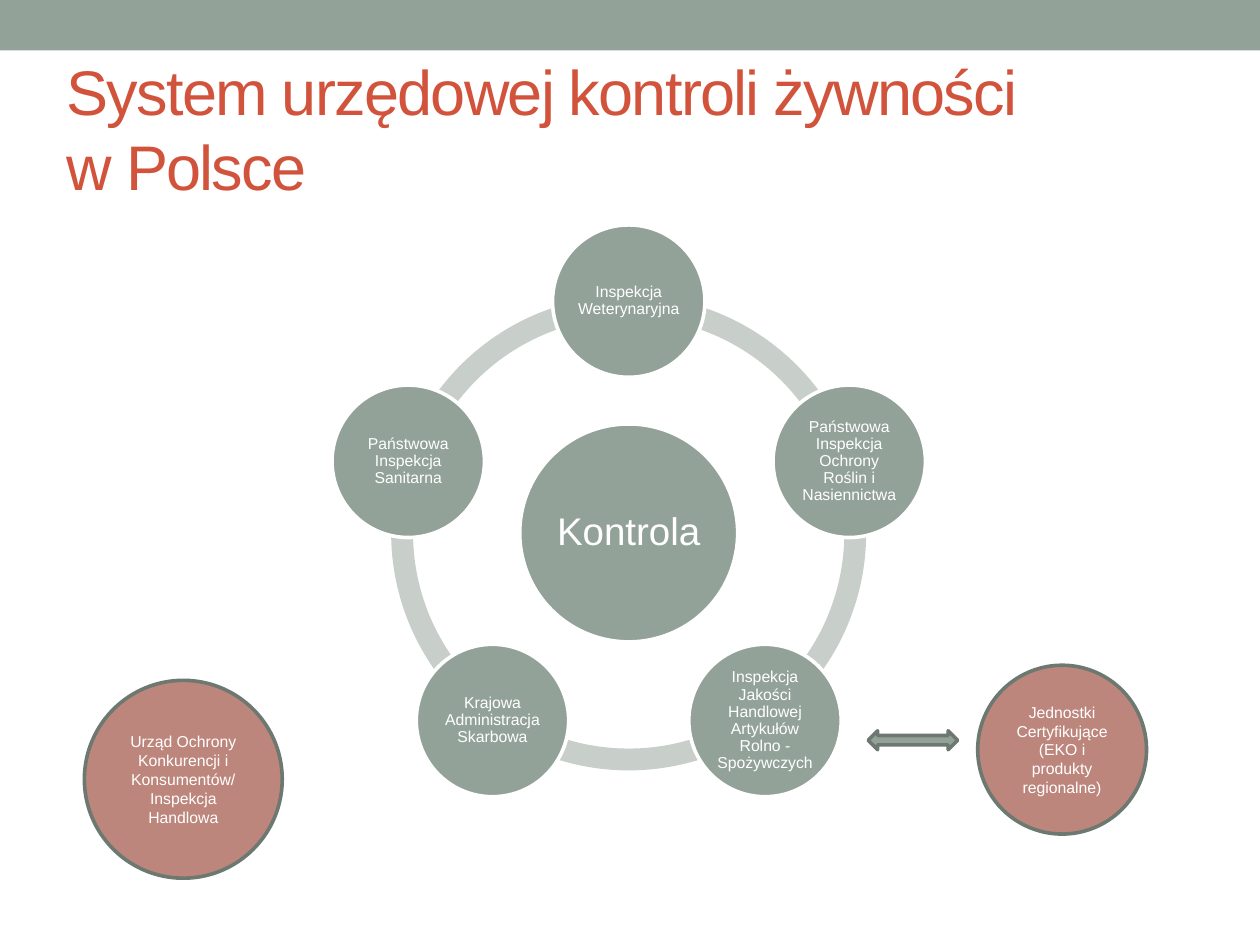
import math

from pptx import Presentation
from pptx.dml.color import RGBColor
from pptx.enum.shapes import MSO_SHAPE
from pptx.enum.text import MSO_ANCHOR, PP_ALIGN
from pptx.util import Inches, Pt

SAGE = RGBColor(0x93, 0xA2, 0x99)
PALE_SAGE = RGBColor(0xC8, 0xCE, 0xCA)
DARK_SAGE = RGBColor(0x6D, 0x78, 0x71)
ROSE = RGBColor(0xBD, 0x86, 0x7C)
RED = RGBColor(0xD2, 0x53, 0x3C)
WHITE = RGBColor(0xFF, 0xFF, 0xFF)
RECTANGLE, ELLIPSE = MSO_SHAPE.RECTANGLE, MSO_SHAPE.OVAL
BLOCK_ARC, CONNECTOR = MSO_SHAPE.BLOCK_ARC, MSO_SHAPE.FLOWCHART_CONNECTOR
DOUBLE_ARROW = MSO_SHAPE.LEFT_RIGHT_ARROW
LEFT, CENTER, MIDDLE = PP_ALIGN.LEFT, PP_ALIGN.CENTER, MSO_ANCHOR.MIDDLE

# Content
TITLE = "System urzędowej kontroli żywności \vw Polsce"
HUB = "Kontrola"
INSPECTIONS = [  # clockwise from the top
    "Inspekcja Weterynaryjna",
    "Państwowa Inspekcja Ochrony Roślin i Nasiennictwa",
    "Inspekcja Jakości Handlowej Artykułów Rolno - Spożywczych",
    "Krajowa Administracja Skarbowa",
    "Państwowa Inspekcja Sanitarna",
]
OUTSIDE_BODIES = [  # text, left, top, diameter
    ("Urząd Ochrony Konkurencji i Konsumentów/ Inspekcja Handlowa", 0.67, 5.4, 1.57),
    ("Jednostki Certyfikujące (EKO i produkty regionalne)", 7.76, 5.28, 1.34),
]

# Wheel geometry, in inches and degrees
CENTER_X, CENTER_Y = 4.99, 4.23
RING_DIAMETER, HUB_DIAMETER, NODE_DIAMETER = 3.77, 1.73, 1.21
ORBIT = 1.84
TOP_ANGLE = 270
STEP = 360 / len(INSPECTIONS)
ADJUSTMENT_PER_DEGREE = 0.6
RING_THICKNESS = 0.046


def add_shape(slide, kind, left, top, width, height, fill, line=None):
    shape = slide.shapes.add_shape(
        kind, Inches(left), Inches(top), Inches(width), Inches(height))
    shape.shadow.inherit = False
    shape.fill.solid()
    shape.fill.fore_color.rgb = fill
    if line is None:
        shape.line.fill.background()
    else:
        shape.line.color.rgb = line
        shape.line.width = Pt(2.08)
    return shape


def add_circle(slide, x, y, diameter, fill, line):
    return add_shape(slide, ELLIPSE, x - diameter / 2, y - diameter / 2,
                     diameter, diameter, fill, line)


def write(shape, text, size=9, color=WHITE, align=CENTER,
          inset=None, line_spacing=None, tracking=None):
    frame = shape.text_frame
    frame.word_wrap = True
    frame.vertical_anchor = MIDDLE
    if inset is not None:
        frame.margin_left = frame.margin_right = Inches(inset)
        frame.margin_top = frame.margin_bottom = Inches(inset)
    paragraph = frame.paragraphs[0]
    paragraph.text = text
    paragraph.alignment = align
    if line_spacing is not None:
        paragraph.line_spacing = line_spacing
    for run in paragraph.runs:
        run.font.name = "Arial"
        run.font.size = Pt(size)
        run.font.color.rgb = color
        if tracking is not None:
            run.font._element.set("spc", str(tracking * 100))


def add_wheel(slide):
    # Ring segments between neighbouring nodes
    corner = CENTER_X - RING_DIAMETER / 2, CENTER_Y - RING_DIAMETER / 2
    angles = [(TOP_ANGLE + STEP * i) % 360 for i in range(len(INSPECTIONS))]
    for angle in angles:
        arc = add_shape(slide, BLOCK_ARC, *corner, RING_DIAMETER, RING_DIAMETER, PALE_SAGE)
        arc.adjustments[0] = angle * ADJUSTMENT_PER_DEGREE
        arc.adjustments[1] = (angle + STEP) % 360 * ADJUSTMENT_PER_DEGREE
        arc.adjustments[2] = RING_THICKNESS

    # Hub and nodes
    hub = add_circle(slide, CENTER_X, CENTER_Y, HUB_DIAMETER, SAGE, WHITE)
    write(hub, HUB, size=22, inset=0.03, line_spacing=0.9)
    for text, angle in zip(INSPECTIONS, angles):
        x = CENTER_X + ORBIT * math.cos(math.radians(angle))
        y = CENTER_Y + ORBIT * math.sin(math.radians(angle))
        node = add_circle(slide, x, y, NODE_DIAMETER, SAGE, WHITE)
        write(node, text, inset=0.01, line_spacing=0.9)


def main():
    presentation = Presentation()
    presentation.slide_width, presentation.slide_height = Inches(10), Inches(7.5)
    slide = presentation.slides.add_slide(presentation.slide_layouts[6])

    # Top band and title
    add_shape(slide, RECTANGLE, 0, 0, 10, 0.4, SAGE)
    title = slide.shapes.add_textbox(Inches(0.43), Inches(0.44), Inches(8.95), Inches(1.15))
    write(title, TITLE, size=36, color=RED, align=LEFT, tracking=-1)

    add_wheel(slide)

    # Bodies outside the wheel
    for text, left, top, diameter in OUTSIDE_BODIES:
        body = add_shape(slide, CONNECTOR, left, top, diameter, diameter, ROSE, DARK_SAGE)
        write(body, text)
    add_shape(slide, DOUBLE_ARROW, 6.89, 5.8, 0.71, 0.15, SAGE, DARK_SAGE)

    presentation.save("out.pptx")


if __name__ == "__main__":
    main()
